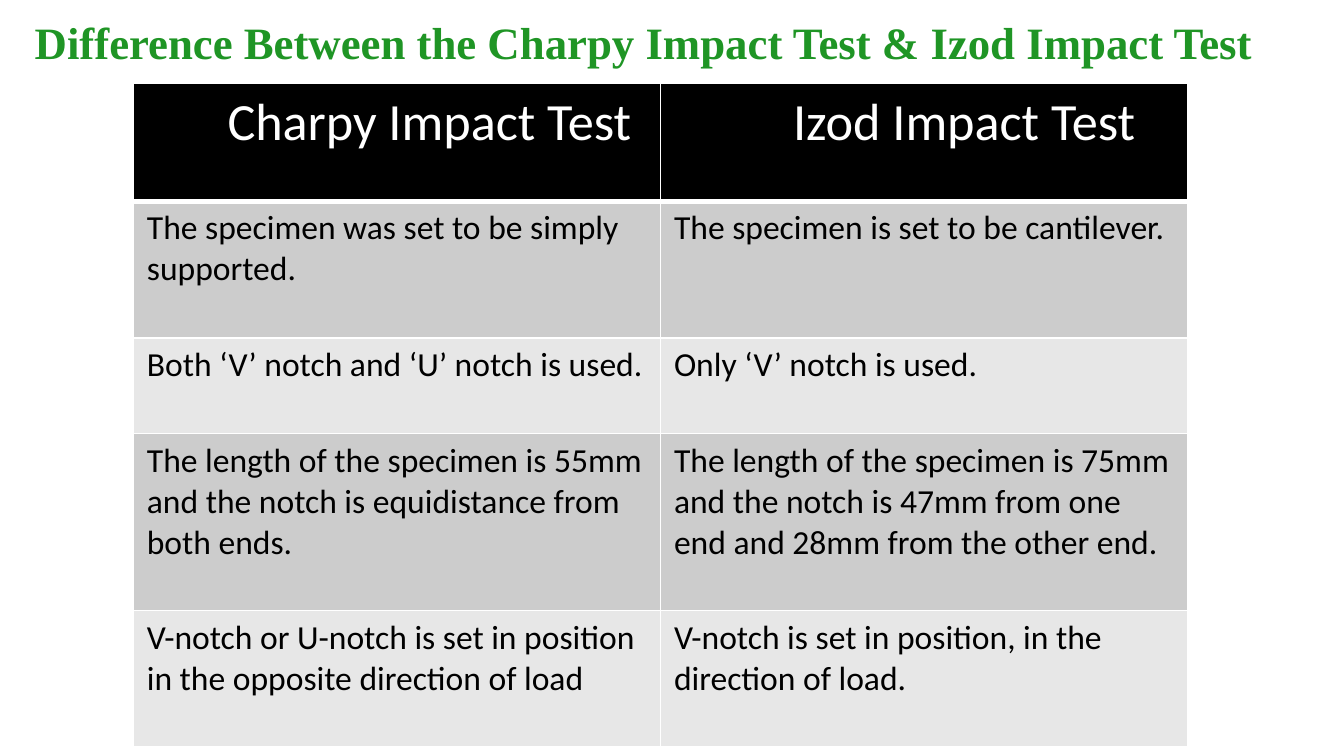
import pptx
import pptx.util
import pptx.dml.color
import pptx.enum.text
import pptx.oxml
import pptx.oxml.ns

Pt = pptx.util.Pt

# Content
TITLE = "Difference Between the Charpy Impact Test & Izod Impact Test"
HEADERS = ["Charpy Impact Test", "Izod Impact Test"]
ROWS = [
    ("The specimen was set to be simply supported.",
     "The specimen is set to be cantilever."),
    ("Both ‘V’ notch and ‘U’ notch is used.",
     "Only ‘V’ notch is used."),
    ("The length of the specimen is 55mm and the notch is equidistance from both ends.",
     "The length of the specimen is 75mm and the notch is 47mm from one end "
     "and 28mm from the other end."),
    ("V-notch or U-notch is set in position in the opposite direction of load",
     "V-notch is set in position, in the direction of load."),
]

# Style and layout, in points
COLORS = {"title": "1F9525", "header": "000000", "dark": "CCCCCC",
          "light": "E7E7E7", "white": "FFFFFF", "text": "000000"}
ROW_HEIGHTS = [63, 73.2, 51.2, 95, 73]
COL_WIDTH = 282.4
HEADER_INSETS = [50.4, 71]


def rgb(name):
    return pptx.dml.color.RGBColor.from_string(COLORS[name])


def add_run(p, text, size, font, color, bold=False):
    r = p.add_run()
    r.text = text
    r.font.size = Pt(size)
    r.font.name = font
    r.font.bold = bold
    r.font.color.rgb = rgb(color)


def set_borders(cell, bottom, top):
    tc_pr = cell._tc.get_or_add_tcPr()
    widths = {"lnL": 1, "lnR": 1, "lnT": top, "lnB": bottom}
    for i, (side, width) in enumerate(widths.items()):
        tc_pr.insert(i, pptx.oxml.parse_xml(
            f'<a:{side} {pptx.oxml.ns.nsdecls("a")} w="{Pt(width)}"><a:solidFill>'
            f'<a:srgbClr val="{COLORS["white"]}"/></a:solidFill></a:{side}>'))


prs = pptx.Presentation()
prs.slide_width, prs.slide_height = Pt(720), Pt(405)
s = prs.slides.add_slide(prs.slide_layouts[6])

# Title
sp = s.shapes.add_textbox(Pt(11.5), Pt(10), Pt(673), Pt(24))
tf = sp.text_frame
tf.word_wrap = True
tf.vertical_anchor = pptx.enum.text.MSO_ANCHOR.MIDDLE
add_run(tf.paragraphs[0], TITLE, 24, "Times New Roman", "title", bold=True)

# Comparison table
table = s.shapes.add_table(len(ROWS) + 1, len(HEADERS), Pt(71.5), Pt(44.8),
                           Pt(COL_WIDTH * len(HEADERS)), Pt(sum(ROW_HEIGHTS))).table
for col in table.columns:
    col.width = Pt(COL_WIDTH)
for row, height in zip(table.rows, ROW_HEIGHTS):
    row.height = Pt(height)

for i, texts in enumerate([HEADERS] + ROWS):
    for j, text in enumerate(texts):
        cell = table.cell(i, j)
        p = cell.text_frame.paragraphs[0]
        cell.fill.solid()
        if i == 0:
            cell.fill.fore_color.rgb = rgb("header")
            cell.margin_left = Pt(HEADER_INSETS[j])
            add_run(p, text, 28, "Calibri", "white")
        else:
            cell.fill.fore_color.rgb = rgb("dark" if i % 2 else "light")
            add_run(p, text, 18, "Calibri", "text")
        set_borders(cell, bottom=3 if i == 0 else 1, top=3 if i == 1 else 1)

prs.save("out.pptx")
